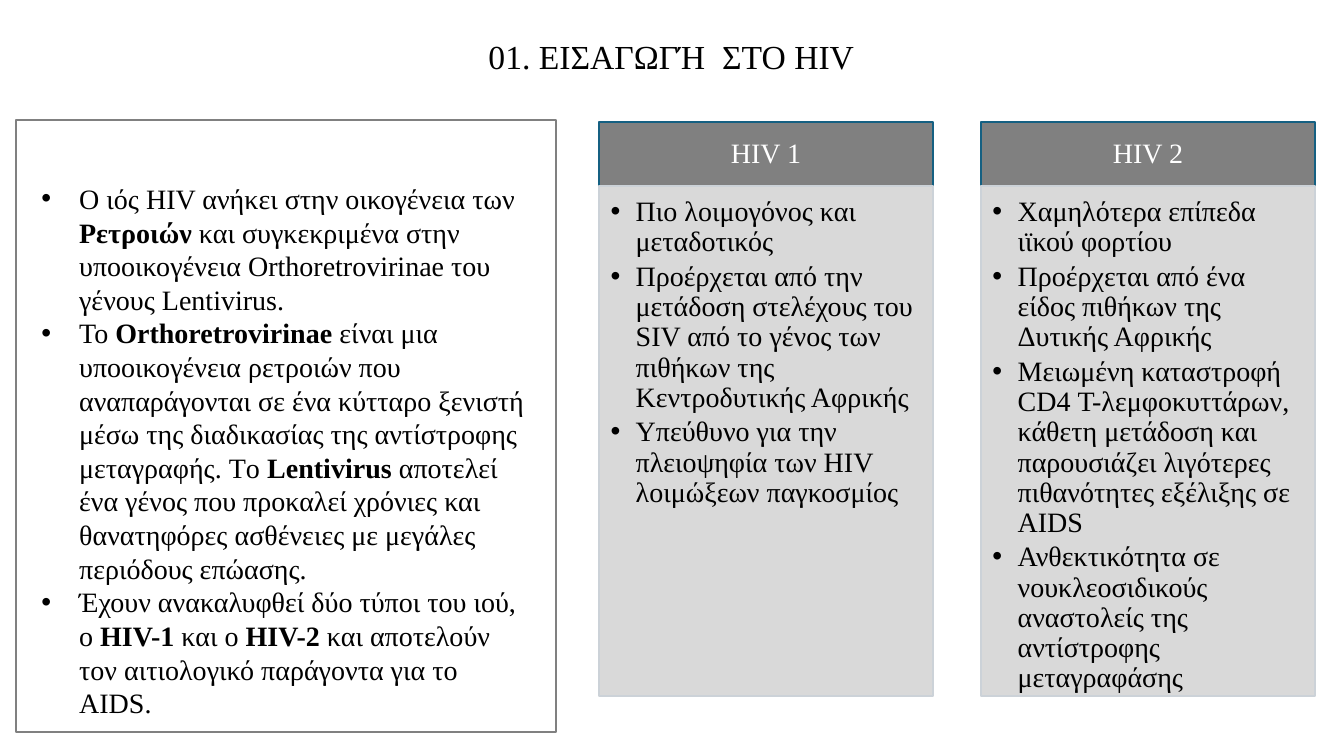
import pptx
import pptx.util
import pptx.dml.color
import pptx.enum.shapes
import pptx.enum.text
import lxml.etree

Pt = pptx.util.Pt
RECT = pptx.enum.shapes.MSO_SHAPE.RECTANGLE
ALIGN = pptx.enum.text.PP_ALIGN
ANCHOR = pptx.enum.text.MSO_ANCHOR
NS = "{http://schemas.openxmlformats.org/drawingml/2006/main}"


def paint(part, hue):
    """Give a fill, or the fill of a line or font, one solid colour."""
    part.solid()
    part.fore_color.rgb = pptx.dml.color.RGBColor.from_string(hue)


def write(para, text, size, hue, indent=0):
    """Fill a paragraph; text between asterisks is bold, an indent adds a bullet."""
    for i, part in enumerate(text.split("*")):
        if part:
            run = para.add_run()
            run.text = part
            if i % 2:
                run.font.bold = True
    para.space_before = Pt(0)
    if indent:
        props = para._p.get_or_add_pPr()
        props.set("marL", str(Pt(indent)))
        props.set("indent", str(-Pt(indent)))
        lxml.etree.SubElement(props, NS + "buFont", typeface="Arial")
        lxml.etree.SubElement(props, NS + "buChar", char="•")
    para.font.name = "Times New Roman"
    para.font.size = Pt(size)
    paint(para.font.fill, hue)


deck = pptx.Presentation()
deck.slide_width, deck.slide_height = Pt(960), Pt(540)
slide = deck.slides.add_slide(deck.slide_layouts[1])
shapes = slide.shapes

# Title
title = shapes.title
title.left, title.top, title.width, title.height = Pt(0), Pt(-10), Pt(959), Pt(104.4)
title.text_frame.vertical_anchor = ANCHOR.MIDDLE
head = title.text_frame.paragraphs[0]
head.alignment = ALIGN.CENTER
head.line_spacing = 0.9
write(head, "01. ΕΙΣΑΓΩΓΉ  ΣΤΟ HIV", 24, "000000")

# Introduction
facts = [
    "Ο ιός HIV ανήκει στην οικογένεια των *Ρετροιών *και συγκεκριμένα στην "
    "υποοικογένεια Orthoretrovirinae του γένους Lentivirus. ",
    "Το *Orthoretrovirinae* είναι μια υποοικογένεια ρετροιών που αναπαράγονται "
    "σε ένα κύτταρο ξενιστή μέσω της διαδικασίας της αντίστροφης μεταγραφής. Tο "
    "*Lentivirus *αποτελεί ένα γένος που προκαλεί χρόνιες και θανατηφόρες "
    "ασθένειες με μεγάλες περιόδους επώασης. ",
    "Έχουν ανακαλυφθεί δύο τύποι του ιού, ο *HIV-1* και ο *HIV-2* και αποτελούν "
    "τον αιτιολογικό παράγοντα για το AIDS. ",
]
intro = slide.placeholders[1]
intro.left, intro.top, intro.width, intro.height = Pt(22.3), Pt(126), Pt(364.3), Pt(411.8)
frame = intro.text_frame
frame.auto_size = pptx.enum.text.MSO_AUTO_SIZE.NONE
frame.vertical_anchor = ANCHOR.TOP
for i, fact in enumerate(facts):
    para = frame.add_paragraph() if i else frame.paragraphs[0]
    write(para, fact, 20, "000000", 27)

# Columns for the two types
types = {
    "HIV 1": [
        "Πιο λοιμογόνος και μεταδοτικός",
        "Προέρχεται από την μετάδοση στελέχους του SIV από το γένος των "
        "πιθήκων της Κεντροδυτικής Αφρικής",
        "Υπεύθυνο για την πλειοψηφία των HIV λοιμώξεων παγκοσμίος",
    ],
    "HIV 2": [
        "Χαμηλότερα επίπεδα ιϊκού φορτίου",
        "Προέρχεται από ένα είδος πιθήκων της Δυτικής Αφρικής",
        "Μειωμένη καταστροφή CD4 Τ-λεμφοκυττάρων, κάθετη μετάδοση και "
        "παρουσιάζει λιγότερες πιθανότητες εξέλιξης σε AIDS",
        "Ανθεκτικότητα σε νουκλεοσιδικούς αναστολείς της αντίστροφης "
        "μεταγραφάσης",
    ],
}
for col, (name, traits) in enumerate(types.items()):
    left = 427.7 + col * 272.8
    parts = [
        (87.3, 45.4, "808080", "156082", "FFFFFF", [name], 0),
        (132.7, 364.3, "D9D9D9", "CCD2D8", "000000", traits, 18),
    ]
    for top, high, fill, edge, ink, lines, indent in parts:
        box = shapes.add_shape(RECT, Pt(left), Pt(top), Pt(239), Pt(high))
        box.shadow.inherit = False
        paint(box.fill, fill)
        paint(box.line.fill, edge)
        box.line.width = Pt(1.5)
        frame = box.text_frame
        frame.word_wrap = True
        frame.vertical_anchor = ANCHOR.TOP if indent else ANCHOR.MIDDLE
        frame.margin_left = Pt(8.4 if indent else 11.2)
        frame.margin_right = Pt(11.2)
        frame.margin_top = Pt(8.4 if indent else 6.4)
        frame.margin_bottom = Pt(12.6 if indent else 6.4)
        for i, line in enumerate(lines):
            para = frame.add_paragraph() if i else frame.paragraphs[0]
            para.alignment = ALIGN.LEFT if indent else ALIGN.CENTER
            para.line_spacing = 0.9
            para.space_after = Pt(3 if indent else 0)
            write(para, line, 20, ink, indent)

# Frame around the introduction
border = shapes.add_shape(RECT, Pt(11.3), Pt(86), Pt(386), Pt(437))
border.shadow.inherit = False
border.fill.background()
paint(border.line.fill, "808080")
border.line.width = Pt(1.5)

deck.save("out.pptx")
